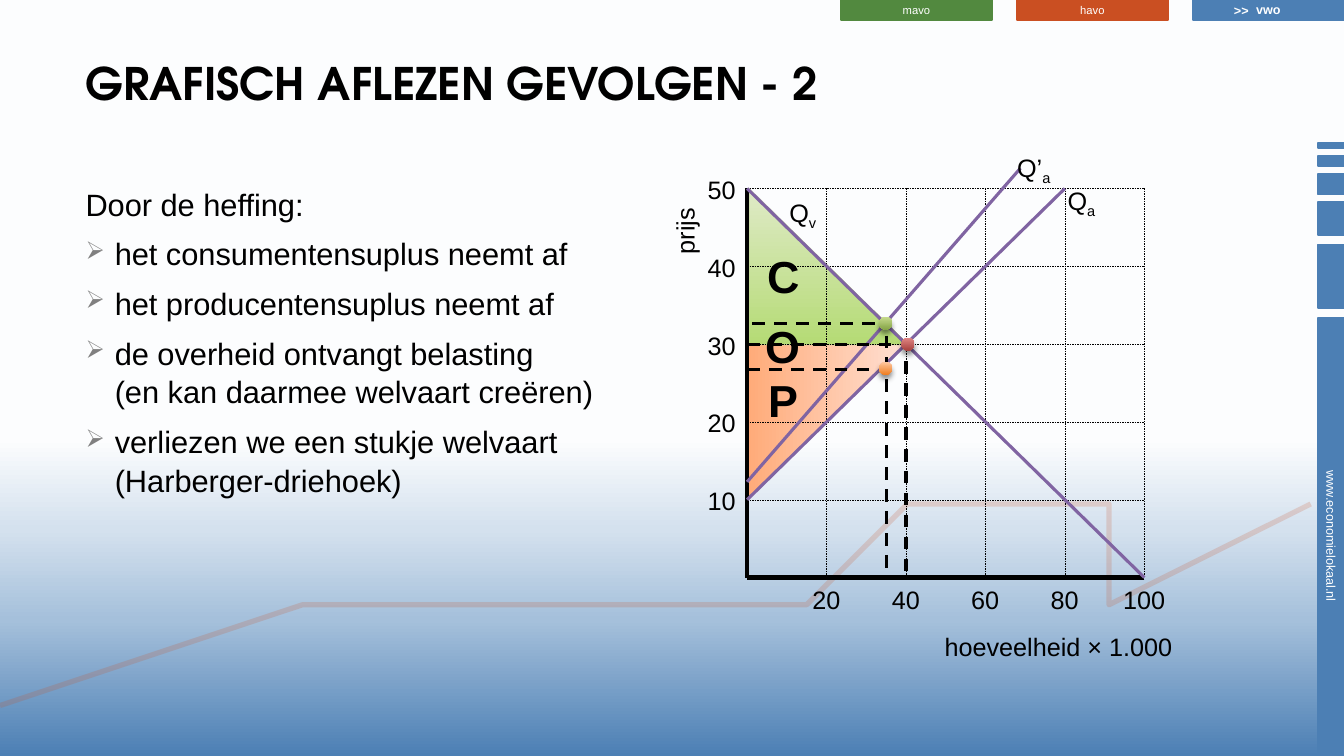
"""Build a slide that reads the welfare effects of a levy from a supply and demand graph."""
import copy
import dataclasses

import pptx
import pptx.dml.color
import pptx.enum.dml
import pptx.enum.shapes
import pptx.enum.text
import pptx.oxml
import pptx.oxml.ns
import pptx.util

SHAPES = pptx.enum.shapes.MSO_SHAPE
ALIGN = pptx.enum.text.PP_ALIGN
ANCHOR = pptx.enum.text.MSO_ANCHOR
qn = pptx.oxml.ns.qn


@dataclasses.dataclass(frozen=True)
class Theme:
    heading: str = "TeX Gyre Adventor"
    text: str = "Arial"
    ink: str = "000000"
    white: str = "FFFFFF"
    blue: str = "4C7FB4"
    rust: str = "CA4F22"
    green: str = "52893F"
    curve: str = "8064A2"
    bullet: str = "808080"
    edge: str = "BECE99"
    consumer: tuple = ((0, "DFEAC7"), (100, "B5DB75"))
    producer: tuple = ((0, "FFE0D3"), (100, "FFAB79"))
    sky: tuple = ((0, "4C7FB4"), (18, "A5C0DB"), (30, "D4E1EE"), (42, "FCFDFE"), (50, "FFFFFF"))
    large: float = 32
    body: float = 22
    label: float = 18
    small: float = 9
    tiny: float = 8


THEME = Theme()
WIDTH, HEIGHT = 13.33, 7.5

TITLE = "GRAFISCH AFLEZEN GEVOLGEN - 2"
INTRO = "Door de heffing:"
EFFECTS = ["het consumentensuplus neemt af",
           "het producentensuplus neemt af",
           "de overheid ontvangt belasting\n(en kan daarmee welvaart creëren)",
           "verliezen we een stukje welvaart\n(Harberger-driehoek)"]
LEVELS = [("mavo", THEME.green, THEME.tiny, False),
          ("havo", THEME.rust, THEME.tiny, False),
          ("vwo", THEME.blue, THEME.small, True)]
SIDE_STRIPES = [("www.economielokaal.nl", 5.32, 4.33), ("", 2.74, 0.63), ("", 2.17, 0.33),
                ("", 1.83, 0.2), ("", 1.6, 0.1), ("", 1.44, 0.05)]
TREND = [(12.97, 4.62), (11.12, 5.51), (10.71, 5.37), (9.28, 5.49), (8.49, 5.66), (7.85, 5.57),
         (5.97, 5.68), (5.01, 6.03), (3.57, 6.15), (2.7, 6.38), (0.03, 7.13)]
PRICES = [10, 20, 30, 40, 50]
QUANTITIES = [20, 40, 60, 80, 100]
CURVES = [((0, 50), (100, 0)), ((0, 10), (80, 50)), ((0, 12.3), (68.8, 52.6))]
CURVE_NAMES = [("Q", "v", 7.73, 1.91, 0.48), ("Q", "a", 10.49, 1.79, 0.49),
               ("Q’", "a", 9.99, 1.46, 0.55)]
READINGS = [((0, 30), (40, 30)), ((40, 27.8), (40, 0)), ((1.3, 32.6), (34, 32.6)),
            ((35, 31.1), (35, 0)), ((0, 26.7), (34.5, 26.7))]
AREAS = [("C", 7.51, 2.42, 0.53), ("P", 7.52, 3.65, 0.51), ("O", 7.49, 3.11, 0.56)]
MARKETS = [((40.5, 30), ((0, "E18785"), (100, "A7423F"))),
           ((34.9, 32.7), ((0, "C9DD90"), (100, "86A547"))),
           ((34.9, 26.9), ((0, "FFC9A4"), (100, "EE7E22")))]

PLOT_LEFT, PLOT_BOTTOM, PLOT_WIDTH, PLOT_HEIGHT = 7.41, 5.73, 3.94, 3.86

deck = pptx.Presentation()
deck.slide_width, deck.slide_height = pptx.util.Inches(WIDTH), pptx.util.Inches(HEIGHT)
slide = deck.slides.add_slide(deck.slide_layouts[5])


def inches(*lengths):
    return [pptx.util.Inches(length) for length in lengths]


def rgb(code):
    return pptx.dml.color.RGBColor.from_string(code)


def at(quantity, price):
    return (PLOT_LEFT + quantity / 100 * PLOT_WIDTH, PLOT_BOTTOM - price / 50 * PLOT_HEIGHT)


def write(frame, text, size=THEME.label, color=THEME.ink, font=THEME.text, bold=False,
          align=ALIGN.LEFT, subscript="", tracking=0, paragraph=None):
    paragraph = paragraph or frame.paragraphs[0]
    paragraph.alignment = align
    for number, line in enumerate(text.split("\n")):
        if number:
            paragraph.add_line_break()
        paragraph.add_run().text = line
    if subscript:
        lowered = paragraph.add_run()
        lowered.text = subscript
        lowered._r.get_or_add_rPr().set("baseline", "-25000")
    for run in paragraph.runs:
        run.font.size, run.font.name, run.font.bold = pptx.util.Pt(size), font, bold
        run.font.color.rgb = rgb(color)
        if tracking:
            run._r.get_or_add_rPr().set("spc", str(int(tracking * 100)))
    return paragraph


def label(text, left, top, width, height=0.4, rotation=0, **style):
    box = slide.shapes.add_textbox(*inches(left, top, width, height))
    box.rotation = rotation
    box.text_frame.word_wrap = False
    box.text_frame.auto_size = pptx.enum.text.MSO_AUTO_SIZE.SHAPE_TO_FIT_TEXT
    write(box.text_frame, text, **style)


def blend(fill, element, stops, angle):
    fill.gradient()
    fill.gradient_angle = angle
    stop_list = element.find(".//" + qn("a:gsLst"))
    while len(stop_list) < len(stops):
        stop_list.append(copy.deepcopy(stop_list[0]))
    for stop, (share, color) in zip(fill.gradient_stops, stops):
        stop.position, stop.color.rgb = share / 100, rgb(color)


def fade(line, percent):
    color = line.fill._xPr.find(".//" + qn("a:srgbClr"))
    color.append(color.makeelement(qn("a:alpha"), {"val": str(percent * 1000)}))


def area(kind, left, top, width, height, stops, rotation=0):
    shape = slide.shapes.add_shape(kind, *inches(left, top, width, height))
    shape.shadow.inherit = False
    shape.rotation = rotation
    blend(shape.fill, shape._element, stops, 270)
    shape.line.fill.background()
    return shape


def bar(text, left, top, width, height, color, size, bold=False, rotation=0):
    shape = slide.shapes.add_shape(SHAPES.RECTANGLE, *inches(left, top, width, height))
    shape.shadow.inherit = False
    shape.rotation = rotation
    shape.fill.solid()
    shape.fill.fore_color.rgb = shape.line.color.rgb = rgb(color)
    shape.line.width = pptx.util.Pt(1.25)
    if text:
        frame = shape.text_frame
        frame.margin_top, frame.margin_bottom = inches(0, 0.01)
        frame.vertical_anchor = ANCHOR.MIDDLE
        write(frame, text, size=size, color=THEME.white, bold=bold, align=ALIGN.CENTER)


def connect(start, end, weight, color=THEME.ink, dashed=False):
    line = slide.shapes.add_connector(pptx.enum.shapes.MSO_CONNECTOR.STRAIGHT,
                                      *inches(*at(*start), *at(*end)))
    line.line.color.rgb, line.line.width = rgb(color), pptx.util.Pt(weight)
    if dashed:
        line.line.dash_style = pptx.enum.dml.MSO_LINE.DASH
    line._element.spPr.append(line._element.makeelement(qn("a:effectLst"), {}))


blend(slide.background.fill, slide.element, THEME.sky, 90)
for text, middle, length in SIDE_STRIPES:
    bar(text, 13.2 - length / 2, middle - 0.13, length, 0.26, THEME.blue, THEME.small, rotation=90)
for place, (text, color, size, bold) in enumerate(LEVELS):
    bar(text, 8.34 + 1.745 * place, 0, 1.5, 0.2, color, size, bold)
outline = slide.shapes.build_freeform(*TREND[0], scale=pptx.util.Inches(1))
outline.add_line_segments(TREND[1:], close=False)
trend = outline.convert_to_shape()
trend.shadow.inherit = False
trend.fill.background()
trend.line.color.rgb, trend.line.width = rgb(THEME.rust), pptx.util.Pt(3.75)
fade(trend.line, 19)
label(">>", 12.14, -0.02, 0.35, 0.25, size=THEME.small, color=THEME.white, bold=True)

area(SHAPES.RIGHT_TRIANGLE, 7.43, 3.39, 1.54, 1.57, THEME.producer, rotation=90)
consumer = area(SHAPES.RIGHT_TRIANGLE, 7.43, 1.87, 1.58, 1.55, THEME.consumer)
consumer.line.color.rgb, consumer.line.width = rgb(THEME.edge), pptx.util.Pt(0.75)
fade(consumer.line, 60)

title = slide.shapes.title
title.left, title.top, title.width, title.height = inches(0.75, 0.5, 10.02, 0.89)
title.text_frame.vertical_anchor = ANCHOR.TOP
write(title.text_frame, TITLE, size=THEME.large, font=THEME.heading, bold=True)

effects = slide.shapes.add_textbox(*inches(0.75, 1.77, 5.4, 5.15)).text_frame
effects.word_wrap = True
write(effects, INTRO, size=THEME.body)
for effect in EFFECTS:
    item = effects.add_paragraph()
    properties = item._p.get_or_add_pPr()
    properties.set("marL", str(pptx.util.Inches(0.29)))
    properties.set("indent", str(-pptx.util.Inches(0.29)))
    for mark in (f'<a:buClr %s><a:srgbClr val="{THEME.bullet}"/></a:buClr>',
                 '<a:buSzPct %s val="80000"/>', '<a:buChar %s char="➢"/>'):
        properties.append(pptx.oxml.parse_xml(mark % pptx.oxml.ns.nsdecls("a")))
    write(effects, effect, size=THEME.body, paragraph=item)
    item.space_before = pptx.util.Pt(4.4)
for paragraph in effects.paragraphs:
    paragraph.line_spacing, paragraph.space_after = 1.05, pptx.util.Pt(3.4)

connect((0, 50), (0, 0), 3)
connect((100, 0), (0, 0), 3)
for price in PRICES:
    connect((0, price), (100, price), 0.25, dashed=True)
    label(str(price), 6.92, at(0, price)[1] - 0.19, 0.48)
for quantity in QUANTITIES:
    connect((quantity, 50), (quantity, 0), 0.25, dashed=True)
    room = 0.2 + 0.14 * len(str(quantity))
    label(str(quantity), at(quantity, 0)[0] - room / 2, 5.75, room)
label("hoeveelheid × 1.000", 9.27, 6.21, 2.48)
label("prijs", 6.46, 2.09, 0.66, rotation=270)
for start, end in CURVES:
    connect(start, end, 2.25, THEME.curve)
for name, index, left, top, width in CURVE_NAMES:
    label(name, left, top, width, subscript=index)
for start, end in READINGS:
    connect(start, end, 2.25, dashed=True)
for name, left, top, width in AREAS:
    label(name, left, top, width, 0.64, size=THEME.large, bold=True, tracking=0.5)
for market, stops in MARKETS:
    across, down = at(*market)
    dot = area(SHAPES.OVAL, across - 0.065, down - 0.065, 0.13, 0.13, stops)
    dot._element.spPr.find(qn("a:effectLst")).append(pptx.oxml.parse_xml(
        f'<a:outerShdw {pptx.oxml.ns.nsdecls("a")} blurRad="50800" dist="38100" dir="5400000">'
        f'<a:srgbClr val="{THEME.ink}"><a:alpha val="46000"/></a:srgbClr></a:outerShdw>'))

deck.save("out.pptx")
